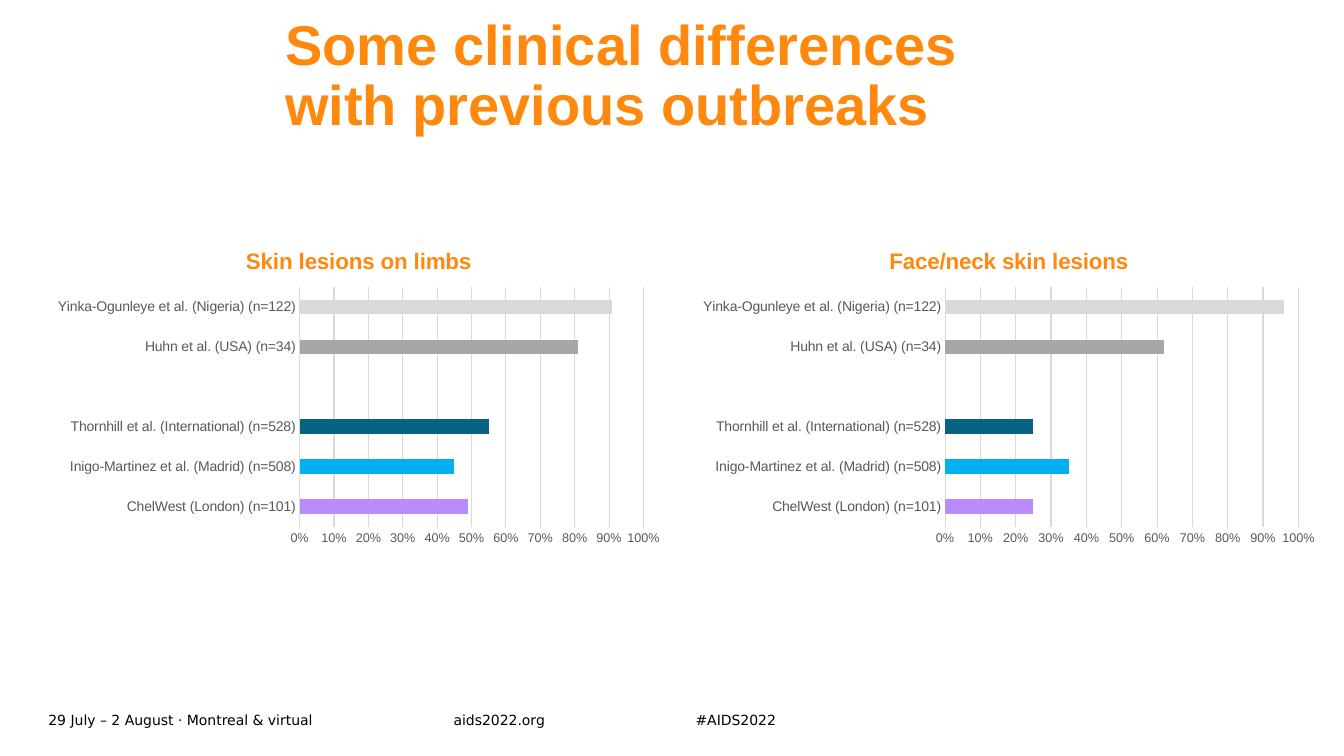
from pptx import Presentation
from pptx.chart.data import CategoryChartData
from pptx.dml.color import RGBColor
from pptx.enum.chart import XL_CHART_TYPE as ChartType, XL_TICK_MARK as TickMark
from pptx.enum.text import MSO_ANCHOR as Anchor, MSO_AUTO_SIZE as AutoSize, PP_ALIGN as Align
from pptx.util import Cm, Pt

ORANGE, GREY, GRID, TEAL = "FF890E", "595959", "D9D9D9", "076382"
STUDIES = [
    ("ChelWest (London) (n=101)", "B98CFD"),
    ("Inigo-Martinez et al. (Madrid) (n=508)", "00B0F0"),
    ("Thornhill et al. (International) (n=528)", TEAL),
    ("", None),
    ("Huhn et al. (USA) (n=34)", "A6A6A6"),
    ("Yinka-Ogunleye et al. (Nigeria) (n=122)", "D9D9D9"),
]
CHARTS = [
    ("Skin lesions on limbs", [0.49, 0.45, 0.55, None, 0.81, 0.91], (1.14, 5.82, 15.8, 8.08)),
    ("Face/neck skin lesions", [0.25, 0.35, 0.25, None, 0.62, 0.96], (17.4, 5.82, 16.05, 8.08)),
]
FOOTER = [
    ("29 July – 2 August · Montreal & virtual", 0, 10.21),
    ("aids2022.org", 10.21, 4.9),
    ("#AIDS2022", 16.31, 4.9),
]


def rgb(code):
    """Turn a hex string into a colour."""
    return RGBColor.from_string(code)


def style_font(font, size, color, name="Arial", bold=False):
    """Set the face, size, colour and weight of a font."""
    font.name, font.size, font.bold = name, Pt(size), bold
    font.color.rgb = rgb(color)


def prepare_frame(frame, anchor):
    """Give a text frame no margins, wrapping and a fixed size."""
    frame.margin_left = frame.margin_right = frame.margin_top = frame.margin_bottom = 0
    frame.word_wrap = True
    frame.auto_size = AutoSize.NONE
    frame.vertical_anchor = anchor


def add_title(page, left, top, width, height):
    """Fill and place the title placeholder."""
    title = page.shapes.title
    title.left, title.top, title.width, title.height = map(Cm, (left, top, width, height))
    prepare_frame(title.text_frame, Anchor.BOTTOM)
    para = title.text_frame.paragraphs[0]
    para.text = "Some clinical differences \vwith previous outbreaks"
    para.alignment = Align.LEFT
    para.line_spacing = 0.9
    for span in para.runs:
        style_font(span.font, 40, ORANGE, bold=True)


def add_footer(page, left, top, height):
    """Place the conference details along the bottom edge."""
    for text, offset, width in FOOTER:
        box = page.shapes.add_textbox(Cm(left + offset), Cm(top), Cm(width), Cm(height))
        prepare_frame(box.text_frame, Anchor.MIDDLE)
        box.text_frame.text = text
        style_font(box.text_frame.paragraphs[0].runs[0].font, 10, "000000", "DejaVu Sans")


def style_axes(chart):
    """Format the study axis and the percentage axis."""
    studies, shares = chart.category_axis, chart.value_axis
    for axis, size in ((studies, 10), (shares, 9)):
        axis.major_tick_mark = axis.minor_tick_mark = TickMark.NONE
        style_font(axis.tick_labels.font, size, GREY)
    shares.minimum_scale, shares.maximum_scale, shares.major_unit = 0, 1, 0.1
    shares.tick_labels.number_format = "0%"
    shares.tick_labels.number_format_is_linked = False
    shares.format.line.fill.background()
    for line in (studies.format.line, shares.major_gridlines.format.line):
        line.color.rgb = rgb(GRID)
        line.width = Pt(0.75)


def add_lesion_chart(page, heading, values, box):
    """Draw the share of patients with lesions, one bar per study."""
    data = CategoryChartData(number_format="0%")
    data.categories = [study for study, _ in STUDIES]
    data.add_series(heading, values)
    chart = page.shapes.add_chart(ChartType.BAR_CLUSTERED, *map(Cm, box), data).chart
    style_font(chart.font, 10, "000000")
    chart.has_legend = False
    chart.has_title = True
    chart.chart_title.include_in_layout = False
    chart.chart_title.text_frame.text = heading
    style_font(chart.chart_title.text_frame.paragraphs[0].runs[0].font, 16, ORANGE, bold=True)
    style_axes(chart)
    plot = chart.plots[0]
    plot.gap_width = 182
    plot.vary_by_categories = False
    bars = plot.series[0]
    bars.format.fill.solid()
    bars.format.fill.fore_color.rgb = rgb(TEAL)
    for index, (_, color) in enumerate(STUDIES):
        if color and color != TEAL:
            fill = bars.points[index].format.fill
            fill.solid()
            fill.fore_color.rgb = rgb(color)


def main():
    """Build the slide and save the deck."""
    deck = Presentation()
    deck.slide_width, deck.slide_height = Cm(33.87), Cm(19.05)
    page = deck.slides.add_slide(deck.slide_layouts[5])
    add_footer(page, 1.22, 17.83, 0.61)
    add_title(page, 7.19, 1.17, 25.25, 2.31)
    for heading, values, box in CHARTS:
        add_lesion_chart(page, heading, values, box)
    deck.save("out.pptx")


if __name__ == "__main__":
    main()
